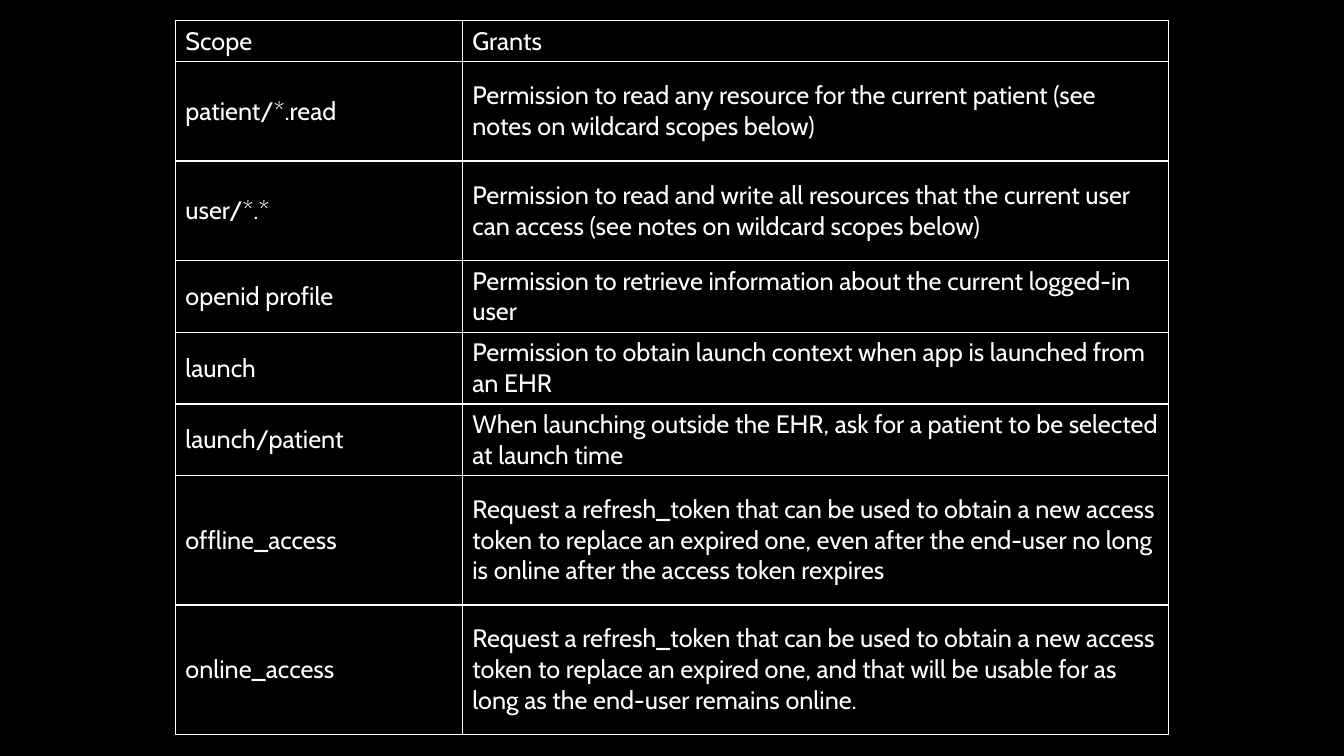
from lxml.etree import SubElement
from pptx import Presentation
from pptx.dml.color import RGBColor
from pptx.enum.text import MSO_ANCHOR
from pptx.oxml.ns import qn
from pptx.util import Cm, Pt

SCOPES = [
    ("Scope", "Grants"),
    ("patient/*.read",
     "Permission to read any resource for the current patient "
     "(see notes on wildcard scopes below)"),
    ("user/*.*",
     "Permission to read and write all resources that the current user "
     "can access (see notes on wildcard scopes below)"),
    ("openid profile",
     "Permission to retrieve information about the current logged-in user"),
    ("launch",
     "Permission to obtain launch context when app is launched from an EHR"),
    ("launch/patient",
     "When launching outside the EHR, ask for a patient to be selected "
     "at launch time"),
    ("offline_access",
     "Request a refresh_token that can be used to obtain a new access token "
     "to replace an expired one, even after the end-user no long is online "
     "after the access token rexpires"),
    ("online_access",
     "Request a refresh_token that can be used to obtain a new access token "
     "to replace an expired one, and that will be usable for as long as "
     "the end-user remains online."),
]
COLUMN_WIDTHS = [7.23, 17.79]
HEADER, TWO_LINES, TWO_LINES_TALL, THREE_LINES = 1.03, 1.8, 2.51, 3.26
ROW_HEIGHTS = ([HEADER] + [TWO_LINES_TALL] * 2 + [TWO_LINES] * 3
               + [THREE_LINES] * 2)


def rgb(hex_color):
    return RGBColor.from_string(hex_color)


class SlideBuilder:
    font_name = "Cabin"
    font_size = 18
    ink = "FFFFFF"
    paper = "000000"

    def __init__(self, slide):
        self.slide = slide

    def background(self):
        fill = self.slide.background.fill
        fill.solid()
        fill.fore_color.rgb = rgb(self.paper)

    def border(self, cell, width=1):
        """Rule all four sides of a cell; call before setting its fill."""
        properties = cell._tc.get_or_add_tcPr()
        for side in ("a:lnL", "a:lnR", "a:lnT", "a:lnB"):
            line = SubElement(properties, qn(side), w=str(Pt(width)))
            solid = SubElement(line, qn("a:solidFill"))
            SubElement(solid, qn("a:srgbClr"), val=self.ink)

    def cell(self, cell, text):
        cell.text = text
        cell.vertical_anchor = MSO_ANCHOR.MIDDLE
        self.border(cell)
        cell.fill.background()
        font = cell.text_frame.paragraphs[0].font
        font.name = self.font_name
        font.size = Pt(self.font_size)
        font.bold = False
        font.color.rgb = rgb(self.ink)

    def table(self, left, top, widths, heights, rows):
        table = self.slide.shapes.add_table(
            len(heights), len(widths), Cm(left), Cm(top),
            Cm(sum(widths)), Cm(sum(heights))).table
        table.horz_banding = False
        for column, width in zip(table.columns, widths):
            column.width = Cm(width)
        for row, height, texts in zip(table.rows, heights, rows):
            row.height = Cm(height)
            for cell, text in zip(row.cells, texts):
                self.cell(cell, text)


def main():
    presentation = Presentation()
    presentation.slide_width = Cm(33.87)
    presentation.slide_height = Cm(19.05)
    blank_layout = presentation.slide_layouts[6]
    builder = SlideBuilder(presentation.slides.add_slide(blank_layout))
    builder.background()
    builder.table(4.42, 0.52, COLUMN_WIDTHS, ROW_HEIGHTS, SCOPES)
    presentation.save("out.pptx")


if __name__ == "__main__":
    main()
